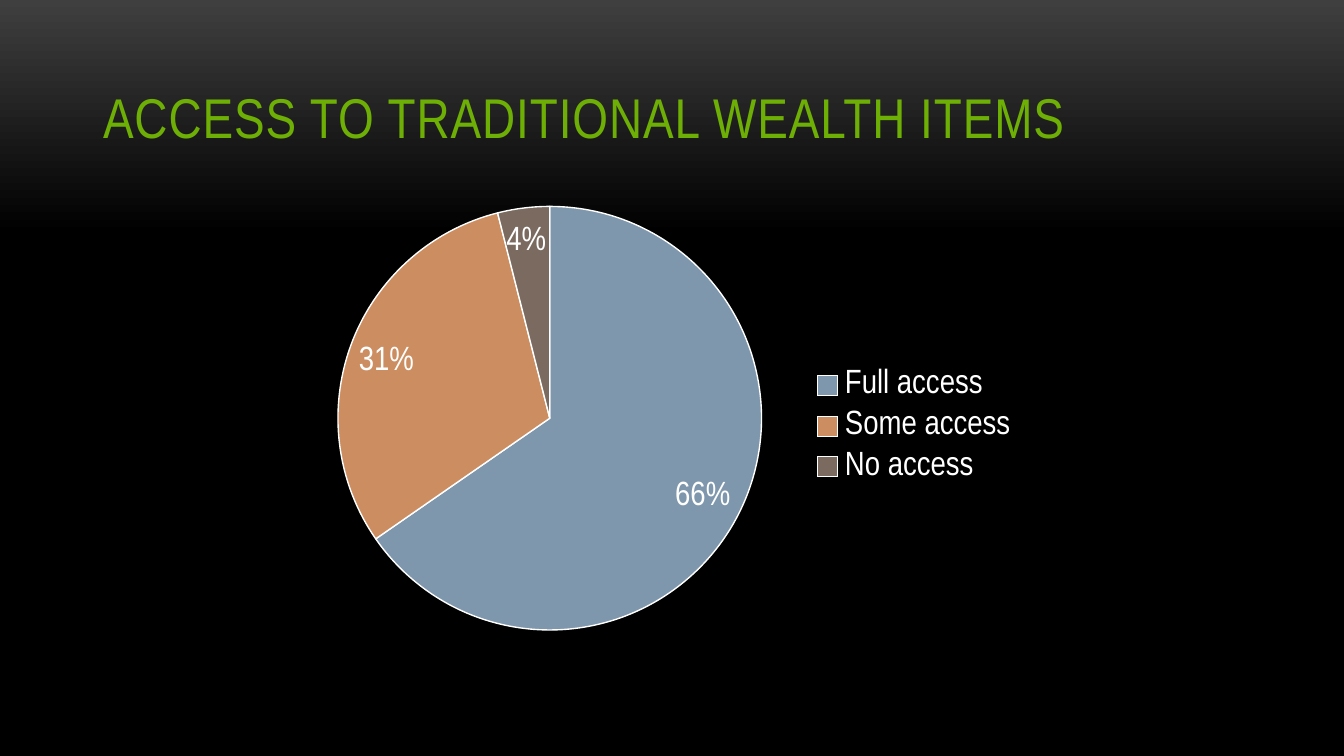
from dataclasses import dataclass

from pptx import Presentation
from pptx.chart.data import CategoryChartData
from pptx.dml.color import RGBColor
from pptx.enum.chart import XL_CHART_TYPE, XL_LABEL_POSITION, XL_LEGEND_POSITION
from pptx.enum.text import MSO_ANCHOR, PP_ALIGN
from pptx.oxml import parse_xml
from pptx.oxml.ns import nsdecls
from pptx.util import Pt

PIE = XL_CHART_TYPE.PIE
INSIDE = XL_LABEL_POSITION.INSIDE_END
RIGHT = XL_LEGEND_POSITION.RIGHT
BOTTOM = MSO_ANCHOR.BOTTOM
LEFT = PP_ALIGN.LEFT


@dataclass(frozen=True)
class Theme:
    face: str = "Arial Narrow"
    glow: str = "3F3F3F"
    dark: str = "000000"
    green: str = "6EAF05"
    white: str = "FFFFFF"
    slices: tuple = ("7E97AD", "CC8E60", "7A6A60")
    head: int = 30
    body: int = 18


THEME = Theme()
SHARES = {"Full access": 66, "Some access": 31, "No access": 4}


def rgb(code):
    return RGBColor.from_string(code)


def style(font, size, color):
    font.name = THEME.face
    font.size = Pt(size)
    font.bold = False
    font.color.rgb = rgb(color)


def paint_back(slide):
    fill = slide.background.fill
    fill.gradient()
    fill.gradient_angle = 270
    stops = zip(fill.gradient_stops, (0, 0.31), (THEME.glow, THEME.dark))
    for stop, place, color in stops:
        stop.position = place
        stop.color.rgb = rgb(color)


def set_title(slide, text):
    title = slide.shapes.title
    title.left, title.top = Pt(48), Pt(16.2)
    title.width, title.height = Pt(624), Pt(67.6)
    frame = title.text_frame
    frame.vertical_anchor = BOTTOM
    frame.text = text
    para = frame.paragraphs[0]
    para.alignment = LEFT
    style(para.font, THEME.head, THEME.green)
    para.runs[0]._r.get_or_add_rPr().set("spc", "50")


def place(part, spot, modes, **box):
    for old in part.findall("{*}layout"):
        part.remove(old)
    sides = "".join(f'<c:{key} val="{val}"/>' for key, val in box.items())
    part.insert(spot, parse_xml(
        f'<c:layout {nsdecls("c")}><c:manualLayout>'
        f'{modes}{sides}</c:manualLayout></c:layout>'))


def nudge(point, x, y):
    label = point.data_label
    style(label.font, THEME.body, THEME.white)
    label.position = INSIDE
    part = label._get_or_add_dLbl()
    place(part, 1, "", x=x, y=y)
    part.insert(2, parse_xml(
        f'<c:numFmt {nsdecls("c")} formatCode="0&quot;%&quot;"'
        ' sourceLinked="0"/>'))


def add_pie(slide, shares):
    data = CategoryChartData()
    data.categories = list(shares)
    data.add_series("Series 1", list(shares.values()))
    chart = slide.shapes.add_chart(
        PIE, Pt(96), Pt(94.4), Pt(486), Pt(282), data).chart
    style(chart.font, THEME.body, THEME.white)
    chart.has_title = False
    chart.has_legend = True
    legend = chart.legend
    legend.position = RIGHT
    legend.include_in_layout = False
    edge = '<c:xMode val="edge"/><c:yMode val="edge"/>'
    place(chart._chartSpace.chart.plotArea, 0,
          '<c:layoutTarget val="inner"/>' + edge,
          x=0.175, y=0.057, w=0.467, h=0.806)
    place(legend._element, 1, edge, x=0.69, y=0.35, w=0.24, h=0.25)

    plot = chart.plots[0]
    plot.vary_by_categories = True
    pie = plot.series[0]
    labels = pie.data_labels
    labels.show_value = True
    labels.number_format = '0"%"'
    labels.number_format_is_linked = False
    labels.position = INSIDE
    style(labels.font, THEME.body, THEME.white)
    for spot, color in enumerate(THEME.slices):
        form = pie.points[spot].format
        form.fill.solid()
        form.fill.fore_color.rgb = rgb(color)
        form.line.color.rgb = rgb(THEME.white)
        form.line.width = Pt(0.75)
    nudge(pie.points[2], -0.02, 0.02)


def main():
    deck = Presentation()
    deck.slide_width, deck.slide_height = Pt(720), Pt(405)
    slide = deck.slides.add_slide(deck.slide_layouts[5])
    paint_back(slide)
    set_title(slide, "ACCESS TO TRADITIONAL WEALTH ITEMS")
    add_pie(slide, SHARES)
    deck.save("out.pptx")


if __name__ == "__main__":
    main()
